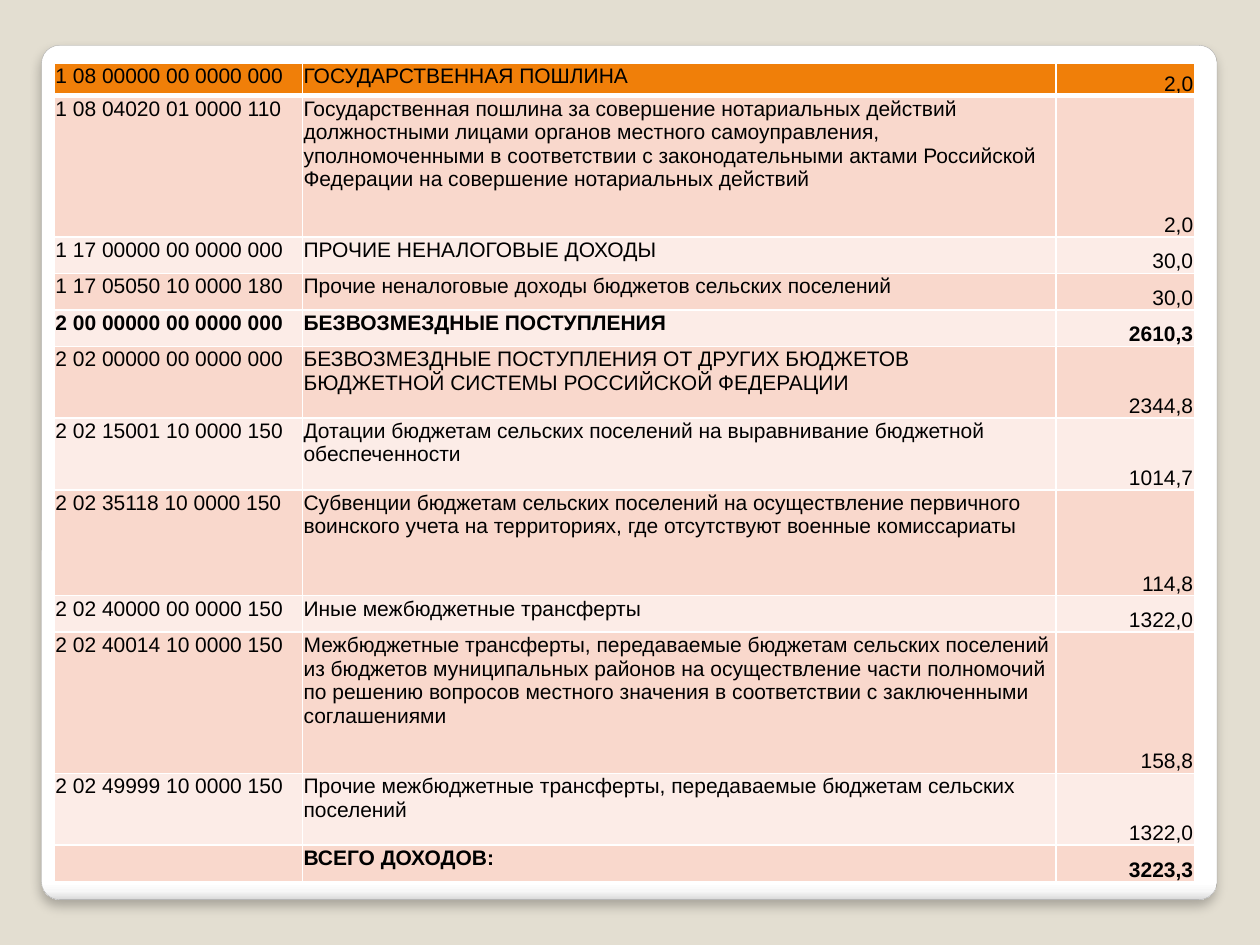
from lxml import etree
from pptx import Presentation
from pptx.dml.color import RGBColor
from pptx.enum.shapes import MSO_SHAPE
from pptx.enum.text import MSO_ANCHOR, PP_ALIGN
from pptx.oxml.ns import qn
from pptx.util import Inches, Pt

ROUNDED = MSO_SHAPE.ROUNDED_RECTANGLE
TOP, BOTTOM = MSO_ANCHOR.TOP, MSO_ANCHOR.BOTTOM
LEFT, RIGHT = PP_ALIGN.LEFT, PP_ALIGN.RIGHT

# code, income item, amount, row height, bold
INCOME = [
    ("1 08 00000 00 0000 000", "ГОСУДАРСТВЕННАЯ ПОШЛИНА", "2,0", 0.26, False),
    ("1 08 04020 01 0000 110",
     "Государственная пошлина за совершение нотариальных действий должностными лицами "
     "органов местного самоуправления, уполномоченными в соответствии с законодательными "
     "актами Российской Федерации на совершение нотариальных действий", "2,0", 1.12, False),
    ("1 17 00000 00 0000 000", "ПРОЧИЕ НЕНАЛОГОВЫЕ ДОХОДЫ", "30,0", 0.29, False),
    ("1 17 05050 10 0000 180", "Прочие неналоговые доходы бюджетов сельских поселений",
     "30,0", 0.29, False),
    ("2 00 00000 00 0000 000", "БЕЗВОЗМЕЗДНЫЕ ПОСТУПЛЕНИЯ", "2610,3", 0.29, True),
    ("2 02 00000 00 0000 000",
     "БЕЗВОЗМЕЗДНЫЕ ПОСТУПЛЕНИЯ ОТ ДРУГИХ БЮДЖЕТОВ БЮДЖЕТНОЙ СИСТЕМЫ РОССИЙСКОЙ ФЕДЕРАЦИИ",
     "2344,8", 0.57, False),
    ("2 02 15001 10 0000 150",
     "Дотации бюджетам сельских поселений на выравнивание бюджетной обеспеченности",
     "1014,7", 0.57, False),
    ("2 02 35118 10 0000 150",
     "Субвенции бюджетам сельских поселений на осуществление первичного воинского учета "
     "на территориях, где отсутствуют военные комиссариаты", "114,8", 0.84, False),
    ("2 02 40000 00 0000 150", "Иные межбюджетные трансферты", "1322,0", 0.29, False),
    ("2 02 40014 10 0000 150",
     "Межбюджетные трансферты, передаваемые бюджетам сельских поселений из бюджетов "
     "муниципальных районов на осуществление части полномочий по решению вопросов местного "
     "значения в соответствии с заключенными соглашениями", "158,8", 1.12, False),
    ("2 02 49999 10 0000 150",
     "Прочие межбюджетные трансферты, передаваемые бюджетам сельских поселений",
     "1322,0", 0.57, False),
    ("", "ВСЕГО ДОХОДОВ:", "3223,3", 0.29, True),
]
# width, alignment, anchor
COLUMNS = [(1.97, LEFT, TOP), (5.98, LEFT, TOP), (1.1, RIGHT, BOTTOM)]
HEADER, BANDS = "F07F09", ("FCECE7", "F9D8CC")
CARD_STOPS = [(0, "FFFFFF"), (98, "FFFFFF"), (99, "F7F7F7"), (100, "DADADA")]
MARGINS = {"margin_left": 0.01, "margin_top": 0.01, "margin_right": 0.01, "margin_bottom": 0}
FONT_SIZE = 12


def rgb(color):
    return RGBColor.from_string(color)


def add_xml_color(parent, color):
    return etree.SubElement(parent, qn("a:srgbClr"), val=color)


def add_card(slide):
    card = slide.shapes.add_shape(ROUNDED, Inches(0.33), Inches(0.36), Inches(9.33), Inches(6.78))
    card.adjustments[0] = 0.021
    card.line.color.rgb = rgb("A4A4A4")
    card.line.width = Pt(0.16)
    card.fill.gradient()
    card.fill.gradient_angle = 270
    properties = card.fill._xPr
    stops = properties.find(qn("a:gradFill")).find(qn("a:gsLst"))
    for stop in list(stops):
        stops.remove(stop)
    for position, color in CARD_STOPS:
        add_xml_color(etree.SubElement(stops, qn("a:gs"), pos=str(position * 1000)), color)
    card.shadow.inherit = False
    shadow = etree.SubElement(properties.find(qn("a:effectLst")), qn("a:outerShdw"),
                              blurRad=str(Pt(6)), dist=str(Pt(4)), dir="5400000",
                              algn="t", rotWithShape="0")
    etree.SubElement(add_xml_color(shadow, "000000"), qn("a:alpha"), val="25000")


def set_borders(cell, widths):
    """Draw white borders; widths maps L, R, T and B to points."""
    properties = cell._tc.get_or_add_tcPr()
    for index, (side, width) in enumerate(widths.items()):
        border = etree.Element(qn(f"a:ln{side}"), w=str(Pt(width)))
        add_xml_color(etree.SubElement(border, qn("a:solidFill")), "FFFFFF")
        properties.insert(index, border)


def fill_cell(cell, text, bold, alignment, anchor, color):
    for name, inches in MARGINS.items():
        setattr(cell, name, Inches(inches))
    cell.vertical_anchor = anchor
    cell.fill.solid()
    cell.fill.fore_color.rgb = rgb(color)
    paragraph = cell.text_frame.paragraphs[0]
    paragraph.alignment = alignment
    if not text:
        etree.SubElement(paragraph._p, qn("a:endParaRPr"), sz=str(FONT_SIZE * 100))
        return
    run = paragraph.add_run()
    run.text = text
    for name, value in {"name": "Arial", "size": Pt(FONT_SIZE), "bold": bold}.items():
        setattr(run.font, name, value)
    run.font.color.rgb = rgb("000000")


def add_income_table(slide):
    width = sum(column[0] for column in COLUMNS)
    height = sum(row[3] for row in INCOME)
    table = slide.shapes.add_table(len(INCOME), len(COLUMNS), Inches(0.43), Inches(0.5),
                                   Inches(width), Inches(height)).table
    for column, (column_width, _, _) in zip(table.columns, COLUMNS):
        column.width = Inches(column_width)
    for r, (*texts, row_height, bold) in enumerate(INCOME):
        table.rows[r].height = Inches(row_height)
        color = BANDS[r % 2] if r else HEADER
        widths = {"L": 1, "R": 1, "T": 3 if r == 1 else 1, "B": 1 if r else 3}
        for c, (text, (_, alignment, anchor)) in enumerate(zip(texts, COLUMNS)):
            cell = table.cell(r, c)
            fill_cell(cell, text, bold, alignment, anchor, color)
            set_borders(cell, widths)


def main():
    deck = Presentation()
    deck.slide_width, deck.slide_height = Inches(10), Inches(7.5)
    slide = deck.slides.add_slide(deck.slide_layouts[6])
    slide.background.fill.solid()
    slide.background.fill.fore_color.rgb = rgb("E3DED1")
    add_card(slide)
    add_income_table(slide)
    deck.save("out.pptx")


if __name__ == "__main__":
    main()
